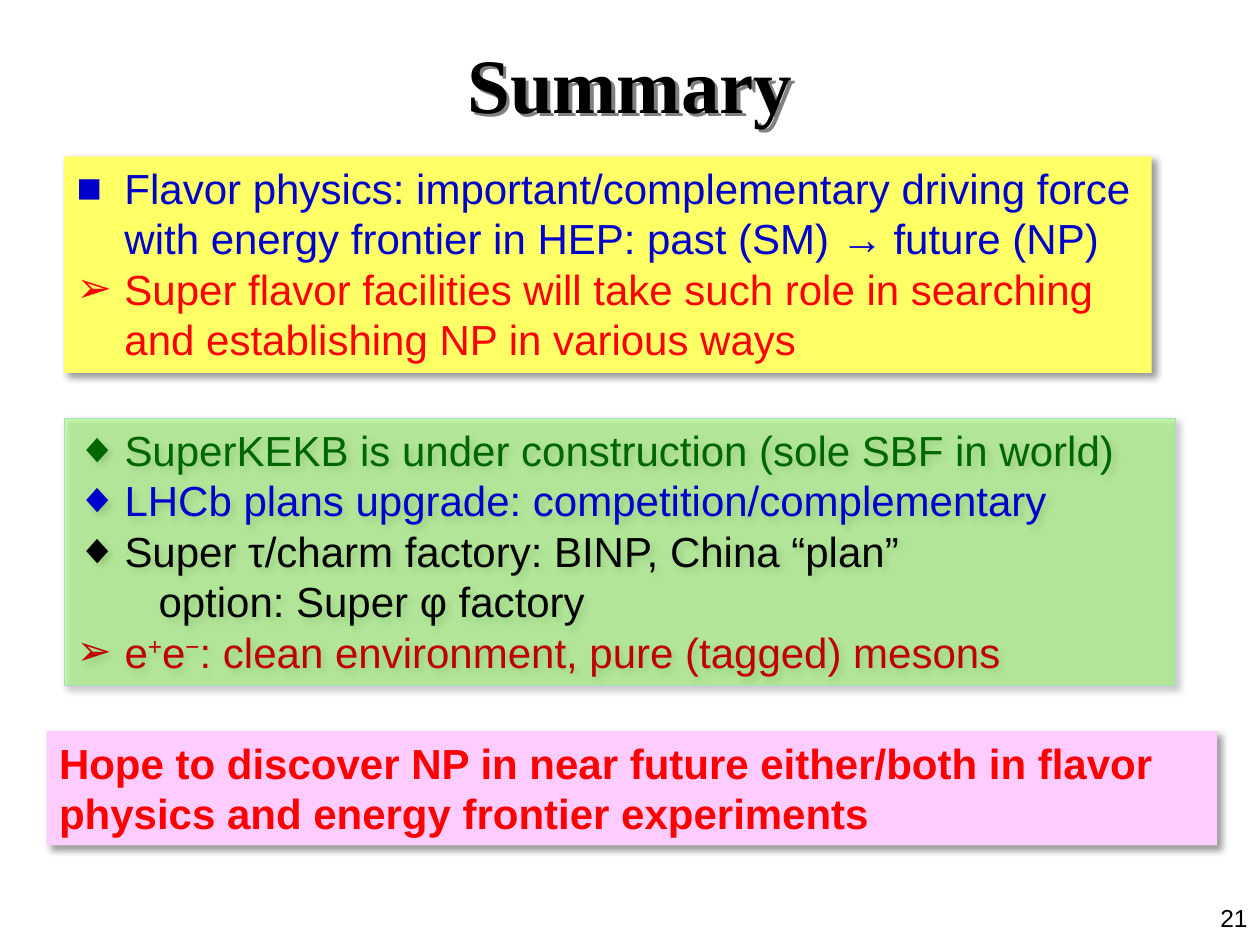
from lxml.etree import SubElement
from pptx import Presentation
from pptx.dml.color import RGBColor
from pptx.enum.shapes import MSO_SHAPE
from pptx.enum.text import MSO_ANCHOR, PP_ALIGN
from pptx.oxml.ns import qn
from pptx.util import Inches, Pt

BLUE, RED, GREEN, BLACK, MAROON = "0000CC", "FF0000", "006600", "000000", "C00000"
HANG = 0.38  # text indent behind a bullet, inches

# Each line: bullet, left indent, colour, runs as (text, style)
PANELS = [
    {"at": (0.51, 3.32, 8.82, 2.12), "fill": "99FF66", "opacity": 50, "line": "A5DEC6",
     "lines": [
         ("◆", HANG, GREEN, [("SuperKEKB is under construction (sole SBF in world)", "")]),
         ("◆", HANG, BLUE, [("LHCb plans upgrade: competition/complementary", "")]),
         ("◆", HANG, BLACK, [("Super τ/charm factory: BINP, China “plan”", "")]),
         ("", 0.65, BLACK, [("option: Super φ factory", "")]),
         ("➢", HANG, MAROON, [("e", ""), ("+", "super"), ("e", ""), ("−", "super"),
                              (": clean environment, pure (tagged) mesons", "")]),
     ]},
    {"at": (0.51, 1.24, 8.63, 1.72), "fill": "FFFF66",
     "lines": [
         ("■", HANG, BLUE, [("Flavor physics: important/complementary driving force", "")]),
         ("", HANG, BLUE, [("with energy frontier in HEP: past (SM) ", ""),
                           ("→ ", "arrow"), ("future (NP)", "")]),
         ("➢", HANG, RED, [("Super flavor facilities will take such role in searching", "")]),
         ("", HANG, RED, [("and establishing NP in various ways", "")]),
     ]},
    {"at": (0.37, 5.8, 9.29, 0.91), "fill": "FFCCFF", "bold": True,
     "lines": [
         ("", 0, RED, [("Hope to discover NP in near future either/both in flavor "
                        "physics and energy frontier experiments", "")]),
     ]},
]


def color(value):
    return RGBColor.from_string(value)


def add_shadow(shape, value="000000", opacity=40, blur=4, distance=3):
    effects = SubElement(shape._element.spPr, qn("a:effectLst"))
    outer = SubElement(effects, qn("a:outerShdw"), blurRad=str(Pt(blur)),
                       dist=str(Pt(distance)), dir=str(45 * 60000),
                       algn="tl", rotWithShape="0")
    tint = SubElement(outer, qn("a:srgbClr"), val=value)
    SubElement(tint, qn("a:alpha"), val=str(opacity * 1000))


def set_font(font, name, size, value, bold=False):
    font.name, font.size, font.bold = name, Pt(size), bold
    font.color.rgb = color(value)


def add_line(para, bullet, indent, value, runs, bold):
    para.alignment = PP_ALIGN.LEFT
    props = para._p.get_or_add_pPr()
    props.set("marL", str(Inches(indent)))
    props.set("indent", str(Inches(-HANG if bullet else 0)))
    if bullet:
        SubElement(props, qn("a:buFont"), typeface="Arial")
        SubElement(props, qn("a:buChar"), char=bullet)
    set_font(para.font, "Arial", 24, value, bold)
    for text, style in runs:
        span = para.add_run()
        span.text = text
        if style == "super":
            span.font._element.set("baseline", "30000")
        elif style == "arrow":
            span.font.name, span.font.bold = "Times New Roman", True


def add_panel(page, panel):
    box = page.shapes.add_shape(MSO_SHAPE.RECTANGLE, *map(Inches, panel["at"]))
    box.fill.solid()
    box.fill.fore_color.rgb = color(panel["fill"])
    if "opacity" in panel:
        tint = box._element.spPr.find(qn("a:solidFill"))[0]
        SubElement(tint, qn("a:alpha"), val=str(panel["opacity"] * 1000))
    if "line" in panel:
        box.line.color.rgb = color(panel["line"])
        box.line.width = Pt(0.75)
    else:
        box.line.fill.background()
    add_shadow(box)
    frame = box.text_frame
    frame.word_wrap = True
    frame.vertical_anchor = MSO_ANCHOR.TOP
    for number, line in enumerate(panel["lines"]):
        para = frame.add_paragraph() if number else frame.paragraphs[0]
        add_line(para, *line, panel.get("bold", False))


def add_label(page, at, text, align, anchor, name, size, bold=False):
    box = page.shapes.add_textbox(*map(Inches, at))
    frame = box.text_frame
    frame.word_wrap = True
    frame.vertical_anchor = anchor
    para = frame.paragraphs[0]
    para.text = text
    para.alignment = align
    set_font(para.font, name, size, BLACK, bold)
    return box


def main():
    deck = Presentation()
    deck.slide_width, deck.slide_height = Inches(10), Inches(7.5)
    page = deck.slides.add_slide(deck.slide_layouts[6])

    # Title with a hard grey shadow
    title = add_label(page, (0.75, 0.17, 8.5, 0.97), "Summary", PP_ALIGN.CENTER,
                      MSO_ANCHOR.MIDDLE, "Times New Roman", 44, True)
    add_shadow(title, "808080", 100, 0, 3)

    # Coloured panels
    for panel in PANELS:
        add_panel(page, panel)

    # Page number
    add_label(page, (7.67, 6.93, 2.33, 0.52), "21", PP_ALIGN.RIGHT,
              MSO_ANCHOR.BOTTOM, "Arial", 14)
    deck.save("out.pptx")


if __name__ == "__main__":
    main()
